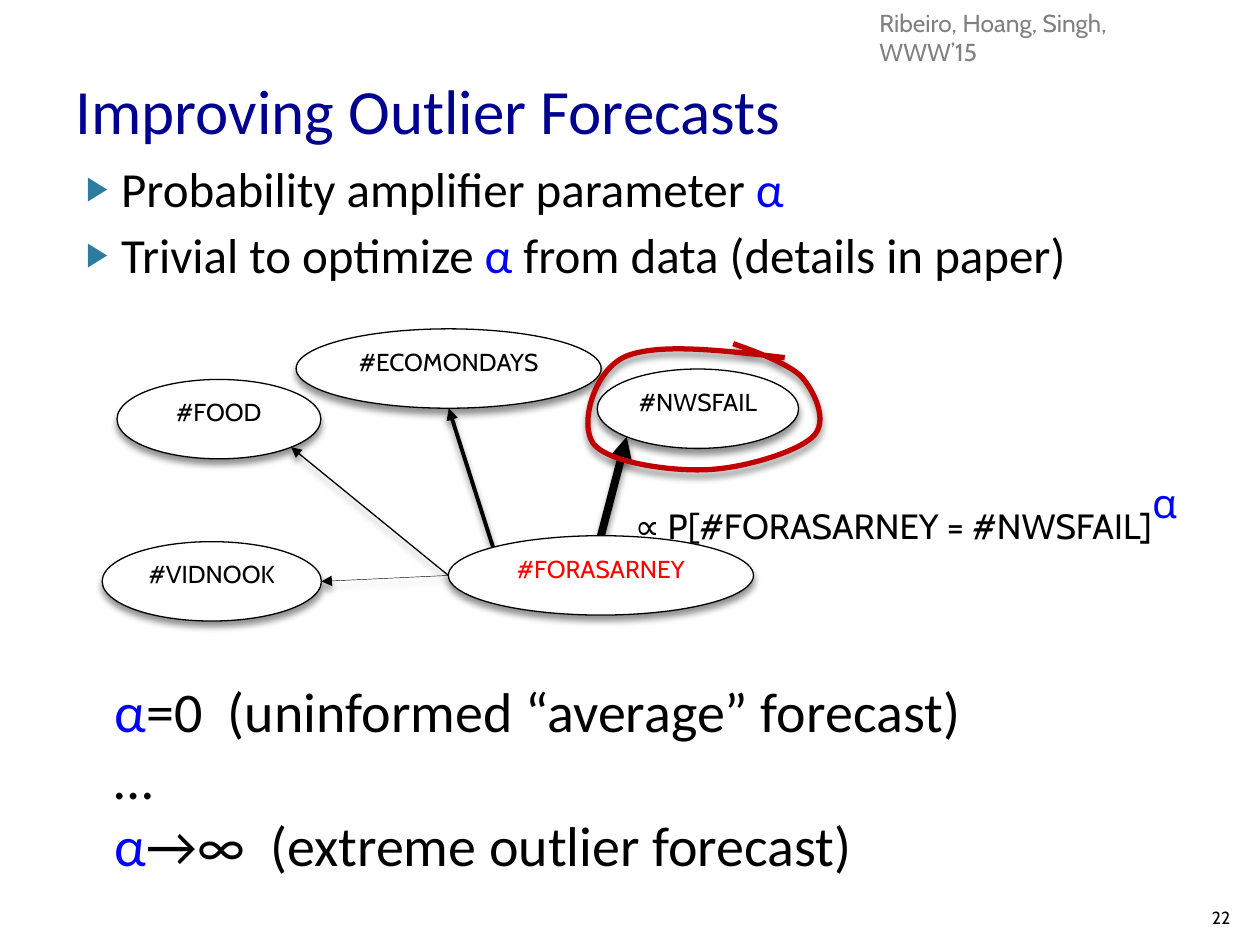
from math import cos, radians, sin
from lxml.etree import SubElement
from pptx import Presentation
from pptx.dml.color import RGBColor
from pptx.enum.shapes import MSO_CONNECTOR, MSO_SHAPE
from pptx.enum.text import MSO_ANCHOR, MSO_AUTO_SIZE, PP_ALIGN
from pptx.oxml.ns import qn
from pptx.util import Cm, Pt

HUES = {"ink": "000000", "blue": "0000FF", "navy": "000090", "gray": "808080",
        "red": "FF0000", "ring": "C00000", "teal": "2C7C9F", "white": "FFFFFF"}

TITLE = [[("Improving Outlier Forecasts", "navy")]]
POINTS = [
    [("Probability amplifier parameter ", "ink"), ("α", "blue")],
    [("Trivial to optimize ", "ink"), ("α ", "blue"),
     ("from data (details in paper)", "ink")],
]
CASES = [
    [("α", "blue"), ("=0  (uninformed “average” forecast)", "ink")],
    [("…", "ink")],
    [("α", "blue"), ("→∞  (extreme outlier forecast)", "ink")],
]
SOURCE = [[("Ribeiro, Hoang, Singh, WWW’15", "gray")]]
ODDS = [[("∝ P[#FORASARNEY = #NWSFAIL]", "ink"), ("α", "blue")]]
NUMBER = [[("22", "ink")]]

TALL = 1.6
TAGS = {
    "#FOOD": (2.36, 7.65, 4.11, "ink"),
    "#ECOMONDAYS": (5.97, 6.63, 6.15, "ink"),
    "#FORASARNEY": (9.04, 10.8, 6.15, "red"),
    "#VIDNOOK": (2.06, 10.92, 4.42, "ink"),
    "#NWSFAIL": (12.04, 7.44, 4.06, "ink"),
}
HUB = "#FORASARNEY"
LINKS = [
    (180, "#FOOD", 45, 0.75),
    (225, "#ECOMONDAYS", 90, 2.25),
    (180, "#VIDNOOK", 0, 0.25),
    (270, "#NWSFAIL", 135, 4.5),
]
RING = [
    (15.82, 7.21),
    (14.53, 7.06), (13.26, 6.91), (12.6, 7.19),
    (11.96, 7.49), (11.68, 8.56), (11.96, 8.94),
    (12.24, 9.32), (13.49, 9.5), (14.22, 9.47),
    (14.96, 9.45), (16.05, 9.12), (16.38, 8.81),
    (16.71, 8.51), (16.43, 7.92), (16.18, 7.62),
    (15.9, 7.29), (14.78, 6.93), (14.78, 6.93),
]


def hue(name):
    return RGBColor.from_string(HUES[name])


def write(frame, lines, font, size, align=PP_ALIGN.LEFT):
    for i, line in enumerate(lines):
        para = frame.add_paragraph() if i else frame.paragraphs[0]
        para.alignment = align
        for text, shade in line:
            run = para.add_run()
            run.text = text
            run.font.name = font
            run.font.size = Pt(size)
            run.font.color.rgb = hue(shade)


def place(shape, left, top, width, height):
    shape.left, shape.top = Cm(left), Cm(top)
    shape.width, shape.height = Cm(width), Cm(height)


def add_text(box, lines, font, size, wrap=False, align=PP_ALIGN.LEFT):
    frame = slide.shapes.add_textbox(*map(Cm, box)).text_frame
    frame.word_wrap = wrap
    write(frame, lines, font, size, align)
    return frame


def stroke(shape, shade, width):
    shape.line.color.rgb = hue(shade)
    shape.line.width = Pt(width)


def shade_under(shape):
    props = shape._element.spPr
    glow = props.find(qn("a:effectLst"))
    if glow is None:
        glow = SubElement(props, qn("a:effectLst"))
    drop = SubElement(glow, qn("a:outerShdw"), blurRad=str(Pt(4)),
                      dist=str(Pt(3)), dir="5400000", rotWithShape="0")
    tint = SubElement(drop, qn("a:srgbClr"), val=HUES["ink"])
    SubElement(tint, qn("a:alpha"), val="43000")


def rim(tag, angle):
    left, top, width, _ = TAGS[tag]
    turn = radians(angle)
    return (Cm(left + width / 2 * (1 + cos(turn))),
            Cm(top + TALL / 2 * (1 + sin(turn))))


def add_bullet(para):
    para.space_before = Pt(4)
    props = para._p.get_or_add_pPr()
    props.set("marL", str(Cm(1.02)))
    props.set("indent", str(Cm(-0.71)))
    tint = SubElement(props, qn("a:buClr"))
    SubElement(tint, qn("a:srgbClr"), val=HUES["teal"])
    SubElement(props, qn("a:buSzPct"), val="68000")
    SubElement(props, qn("a:buChar"), char="▶")


def add_link(start, tag, end, width):
    link = slide.shapes.add_connector(
        MSO_CONNECTOR.STRAIGHT, *rim(HUB, start), *rim(tag, end))
    stroke(link, "ink", width)
    SubElement(link.line._get_or_add_ln(), qn("a:tailEnd"), type="triangle")
    shade_under(link)


def add_tag(tag, left, top, width, shade):
    oval = slide.shapes.add_shape(
        MSO_SHAPE.OVAL, Cm(left), Cm(top), Cm(width), Cm(TALL))
    oval.fill.solid()
    oval.fill.fore_color.rgb = hue("white")
    stroke(oval, "ink", 0.75)
    oval.shadow.inherit = False
    shade_under(oval)
    frame = oval.text_frame
    frame.vertical_anchor = MSO_ANCHOR.TOP
    frame.margin_left = frame.margin_right = 0
    write(frame, [[(tag, shade)]], "Cabin", 14, PP_ALIGN.CENTER)


def add_ring():
    first, *rest = [(Cm(x), Cm(y)) for x, y in RING]
    pen = slide.shapes.build_freeform(*first)
    pen.add_line_segments(rest, close=False)
    ring = pen.convert_to_shape()
    ring.fill.background()
    stroke(ring, "ring", 3)
    ring.shadow.inherit = False
    shade_under(ring)
    steps = list(ring._element.iter(qn("a:lnTo")))
    route = steps[0].getparent()
    for i in range(0, len(steps), 3):
        curve = SubElement(route, qn("a:cubicBezTo"))
        for step in steps[i:i + 3]:
            curve.append(step[0])
            route.remove(step)


deck = Presentation()
deck.slide_width, deck.slide_height = Cm(25.4), Cm(19.05)
slide = deck.slides.add_slide(deck.slide_layouts[1])

title, body = slide.shapes.title, slide.placeholders[1]
place(title, 1.27, 1.42, 22.86, 1.57)
place(body, 1.17, 3.07, 22.86, 12.62)
for holder in (title, body):
    holder.text_frame.auto_size = MSO_AUTO_SIZE.NONE
title.text_frame.vertical_anchor = MSO_ANCHOR.MIDDLE
write(title.text_frame, TITLE, "Calibri", 36)
write(body.text_frame, POINTS, "Calibri", 28)
for para in body.text_frame.paragraphs:
    add_bullet(para)

add_text((17.48, 0.03, 7.04, 0.86), SOURCE, "Cabin", 14, wrap=True)
foot = add_text((24.03, 17.81, 1.02, 1.02), NUMBER, "Cabin", 10,
                align=PP_ALIGN.RIGHT, wrap=True)
foot.vertical_anchor = MSO_ANCHOR.BOTTOM

for link in LINKS:
    add_link(*link)
for tag, spot in TAGS.items():
    add_tag(tag, *spot)
odds = add_text((12.55, 9.35, 12.17, 1.4), ODDS, "Cabin", 20)
power = odds.paragraphs[0].runs[1].font
power.size = Pt(40)
power._element.set("baseline", "30000")
add_ring()
add_text((2.06, 13.51, 17.81, 4.37), CASES, "Calibri", 32)

deck.save("out.pptx")
